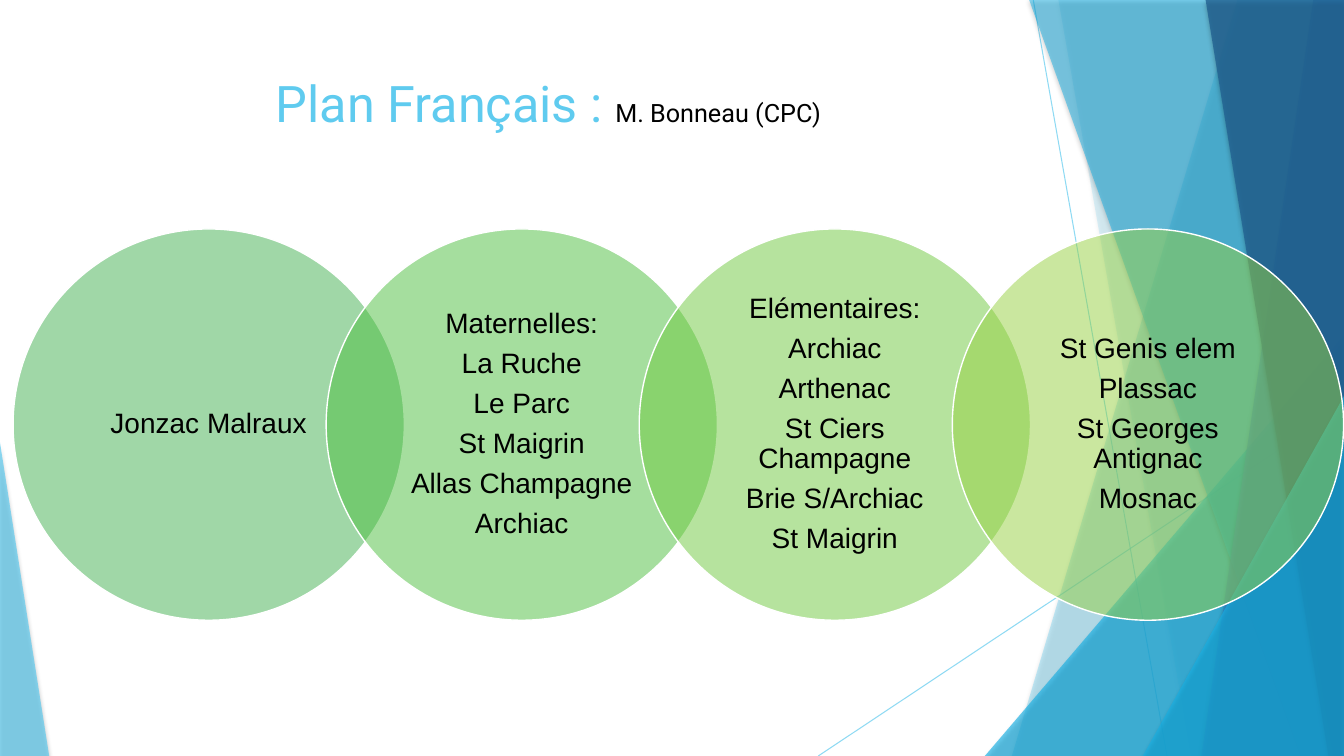
from lxml.etree import SubElement
from pptx import Presentation
from pptx.dml.color import RGBColor
from pptx.enum.shapes import MSO_CONNECTOR, MSO_SHAPE
from pptx.enum.text import MSO_ANCHOR, MSO_AUTO_SIZE, PP_ALIGN
from pptx.oxml.ns import qn
from pptx.util import Cm, Pt

COLORS = {
    "sky": "5FCBEF", "azure": "17B0E4", "blue": "2E83C3", "navy": "226292",
    "black": "000000", "white": "FFFFFF",
    "green": "42B051", "grass": "4CBE3E", "leaf": "6FC93F", "lime": "96D141",
}
WIDTH, HEIGHT = 33.87, 19.05
BAND_TOP = -0.02
DIAMETER, CIRCLE_LEFT, CIRCLE_TOP, CIRCLE_STEP = 9.86, 0.33, 5.77, 7.89

# Top-left x, bottom-left x, colour and opacity; each band runs to the right edge
BANDS_BEHIND = [(31.19, 25.5, "sky", 36), (26.67, 30.02, "sky", 20)]
BANDS_FRONT = [
    (25.93, 32.79, "azure", 50),
    (33.1, 30.28, "blue", 70),
    (30.38, 33.48, "navy", 80),
]
SCHOOLS = [
    ("green", ["Jonzac Malraux"]),
    ("grass", ["Maternelles:", "La Ruche", "Le Parc", "St Maigrin",
               "Allas Champagne", "Archiac"]),
    ("leaf", ["Elémentaires:", "Archiac", "Arthenac", "St Ciers Champagne",
              "Brie S/Archiac", "St Maigrin"]),
    ("lime", ["St Genis elem", "Plassac", "St Georges Antignac", "Mosnac"]),
]


def rgb(name):
    return RGBColor.from_string(COLORS[name])


def set_opacity(properties, percent):
    """Make every colour already set in the shape properties see-through."""
    for color in properties.iter(qn("a:srgbClr")):
        SubElement(color, qn("a:alpha"), val=str(percent * 1000))


class PlanSlide:
    def __init__(self, presentation):
        self.slide = presentation.slides.add_slide(presentation.slide_layouts[5])
        self.shapes = self.slide.shapes

    def title(self, heading, speaker):
        title = self.shapes.title
        title.left, title.top = Cm(1.88), Cm(1.7)
        title.width, title.height = Cm(23.88), Cm(3.66)
        frame = title.text_frame
        frame.vertical_anchor = MSO_ANCHOR.TOP
        frame.auto_size = MSO_AUTO_SIZE.NONE
        paragraph = frame.paragraphs[0]
        paragraph.alignment = PP_ALIGN.CENTER
        paragraph.font.name = "Roboto"
        for text, size, color in ((heading, 36, "sky"), (speaker, 18, "black")):
            run = paragraph.add_run()
            run.text = text
            run.font.name = "Roboto"
            run.font.size = Pt(size)
            run.font.color.rgb = rgb(color)

    def fine_line(self, x1, y1, x2, y2):
        line = self.shapes.add_connector(
            MSO_CONNECTOR.STRAIGHT, Cm(x1), Cm(y1), Cm(x2), Cm(y2))
        line.line.color.rgb = rgb("sky")
        line.line.width = Pt(0.75)
        properties = line._element.spPr
        set_opacity(properties, 70)
        SubElement(properties, qn("a:effectLst"))

    def fill(self, shape, color, opacity):
        shape.fill.solid()
        shape.fill.fore_color.rgb = rgb(color)
        set_opacity(shape._element.spPr, opacity)
        shape.shadow.inherit = False

    def facet(self, shape, color, opacity):
        """Give a decorative outline its colour and soft downward shadow."""
        self.fill(shape, color, opacity)
        shape.line.fill.background()
        effects = shape._element.spPr.find(qn("a:effectLst"))
        shadow = SubElement(effects, qn("a:outerShdw"), blurRad=str(Pt(3)),
                            dist=str(Pt(2)), dir="5400000", rotWithShape="0")
        black = SubElement(shadow, qn("a:srgbClr"), val=COLORS["black"])
        SubElement(black, qn("a:alpha"), val="35000")

    def band(self, top_x, bottom_x, color, opacity):
        outline = self.shapes.build_freeform(
            Cm(top_x), Cm(BAND_TOP), scale=1.0)
        outline.add_line_segments([
            (Cm(WIDTH), Cm(BAND_TOP)),
            (Cm(WIDTH), Cm(HEIGHT)),
            (Cm(bottom_x), Cm(HEIGHT)),
        ])
        self.facet(outline.convert_to_shape(), color, opacity)

    def corner(self, left, top, width, apex, color, opacity):
        """Draw a right triangle that stands on the bottom edge."""
        triangle = self.shapes.add_shape(
            MSO_SHAPE.ISOSCELES_TRIANGLE,
            Cm(left), Cm(top), Cm(width), Cm(HEIGHT - top))
        triangle.adjustments[0] = apex
        self.facet(triangle, color, opacity)

    def circle(self, left, color, schools):
        circle = self.shapes.add_shape(
            MSO_SHAPE.OVAL, Cm(left), Cm(CIRCLE_TOP), Cm(DIAMETER), Cm(DIAMETER))
        self.fill(circle, color, 50)
        circle.line.color.rgb = rgb("white")
        circle.line.width = Pt(1)
        frame = circle.text_frame
        frame.word_wrap = True
        frame.vertical_anchor = MSO_ANCHOR.MIDDLE
        frame.margin_left = frame.margin_right = Cm(0.53)
        frame.margin_top = frame.margin_bottom = Cm(0.08)
        frame.text = "\n".join(schools)
        for paragraph in frame.paragraphs:
            paragraph.alignment = PP_ALIGN.CENTER
            paragraph.line_spacing = 0.9
            paragraph.space_after = Pt(7)
            paragraph.font.name = "Arial"
            paragraph.font.size = Pt(20)
            paragraph.font.color.rgb = rgb("black")


def main():
    presentation = Presentation()
    presentation.slide_width = Cm(WIDTH)
    presentation.slide_height = Cm(HEIGHT)
    plan = PlanSlide(presentation)

    plan.fine_line(26.04, 0, 29.41, HEIGHT)
    plan.fine_line(WIDTH, 10.24, 20.62, HEIGHT)
    for band in BANDS_BEHIND:
        plan.band(*band)
    plan.corner(24.82, 8.46, 9.05, 1, "azure", 66)
    for band in BANDS_FRONT:
        plan.band(*band)
    plan.corner(28.8, 9.98, 5.07, 1, "azure", 66)
    plan.corner(0, 11.15, 1.24, 0, "sky", 70)

    plan.title("Plan Français : ", "M. Bonneau (CPC)")
    for index, (color, schools) in enumerate(SCHOOLS):
        plan.circle(CIRCLE_LEFT + index * CIRCLE_STEP, color, schools)

    presentation.save("out.pptx")


if __name__ == "__main__":
    main()
